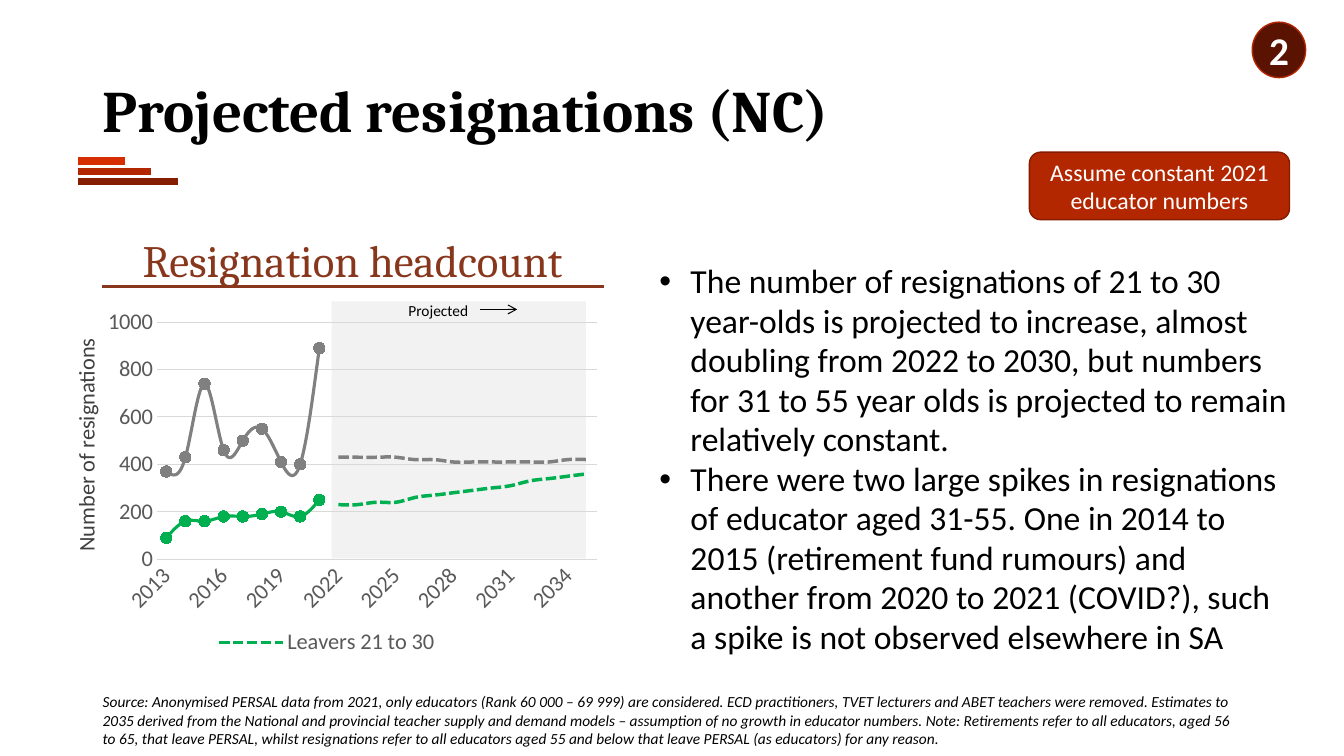
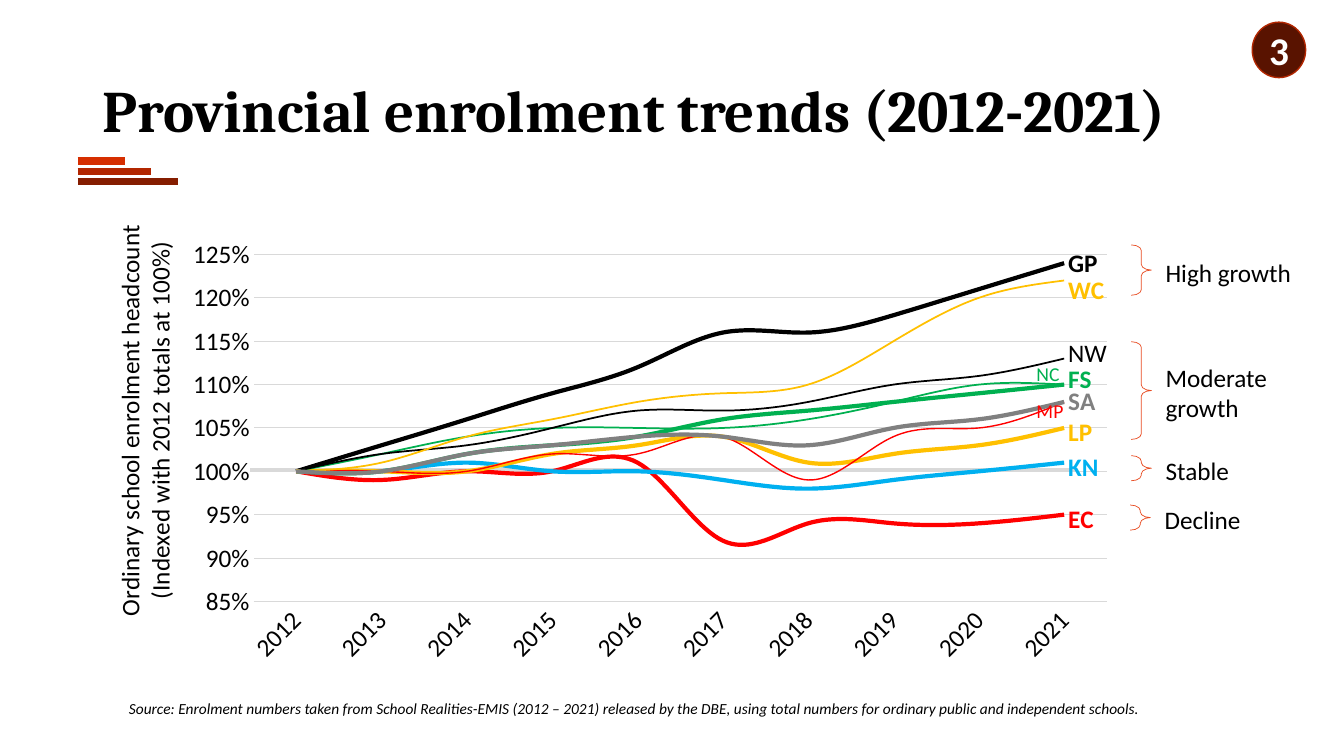
import pptx
import pptx.chart.data
import pptx.dml.color
import pptx.enum.chart
import pptx.enum.dml
import pptx.enum.shapes
import pptx.enum.text
import pptx.oxml
import pptx.oxml.ns
import pptx.util
from lxml import etree

PX = 9144  # EMU per px, 100 px to the inch
COLORS = {
    "black": "000000", "white": "FFFFFF", "ink": "404040", "axis": "595959",
    "grid": "D9D9D9", "shade": "BFBFBF", "grey": "808080", "brown": "88371D",
    "bar_low": "851D00", "bar_mid": "B22600", "bar_top": "D62E00",
    "box_edge": "841C00", "badge": "591300", "brace": "E84C22",
    "green": "00B050", "red": "FF0000", "blue": "00B0F0", "amber": "FFC000",
}
COLORS = {name: pptx.dml.color.RGBColor.from_string(c) for name, c in COLORS.items()}
qn = pptx.oxml.ns.qn
Pt = pptx.util.Pt
PRESET = pptx.enum.shapes.MSO_SHAPE
ALIGN = pptx.enum.text.PP_ALIGN
ANCHOR = pptx.enum.text.MSO_ANCHOR
XL = pptx.enum.chart


def put_text(slide, box, text, size=18, font="Calibri", color="black", bold=False,
             italic=False, align=ALIGN.LEFT, anchor=ANCHOR.MIDDLE, insets=(10, 5, 10, 5),
             spacing=None, bullet=None, rotation=0, preset=None, fill=None, alpha=None,
             edge=None):
    """Add a text box, or a preset shape with text; return it."""
    box = [v * PX for v in box]
    if preset is None:
        shape = slide.shapes.add_textbox(*box)
    else:
        shape = slide.shapes.add_shape(preset, *box)
        shape.shadow.inherit = False
        shape.fill.solid()
        shape.fill.fore_color.rgb = COLORS[fill]
        if alpha:
            tint = shape.fill._xPr.find(".//" + qn("a:srgbClr"))
            etree.SubElement(tint, qn("a:alpha"), val=str(alpha * 1000))
        if edge:
            shape.line.color.rgb = COLORS[edge]
            shape.line.width = Pt(1)
        else:
            shape.line.fill.background()
    shape.rotation = rotation
    frame = shape.text_frame
    frame.word_wrap = True
    frame.vertical_anchor = anchor
    frame.margin_left, frame.margin_top, frame.margin_right, frame.margin_bottom = (
        v * PX for v in insets)
    frame.text = text
    for paragraph in frame.paragraphs:
        paragraph.alignment = align
        if spacing:
            paragraph.line_spacing = spacing
        if bullet:
            props = paragraph._p.get_or_add_pPr()
            props.set("marL", str(31 * PX))
            props.set("indent", str(-31 * PX))
            etree.SubElement(props, qn("a:buFont"), typeface="Arial")
            etree.SubElement(props, qn("a:buChar"), char=bullet)
        for run in paragraph.runs:
            run.font.name, run.font.size = font, Pt(size)
            run.font.bold, run.font.italic = bold, italic
            run.font.color.rgb = COLORS[color]
    return shape


def place(part, after, x, y, w=None, h=None, edge=True, inner=False):
    """Give a chart part a manual layout, following its last child named after."""
    for old in part.findall(qn("c:layout")):
        part.remove(old)
    layout = etree.Element(qn("c:layout"))
    manual = etree.SubElement(layout, qn("c:manualLayout"))
    settings = [("layoutTarget", "inner" if inner else None),
                ("xMode", "edge" if edge else None), ("yMode", "edge" if edge else None),
                ("x", x), ("y", y), ("w", w), ("h", h)]
    for tag, value in settings:
        if value is not None:
            etree.SubElement(manual, qn("c:" + tag), val=str(value))
    if after:
        part.findall(qn(after))[-1].addnext(layout)
    else:
        part.insert(0, layout)


deck = pptx.Presentation()
deck.slide_width, deck.slide_height = 1333 * PX, 750 * PX
resignations = deck.slides.add_slide(deck.slide_layouts[6])
enrolment = deck.slides.add_slide(deck.slide_layouts[6])

# Shading of the projected years, behind the arrow and the chart
put_text(resignations, (329, 299, 252, 255), "Projected", size=11, anchor=ANCHOR.TOP,
         insets=(76, 0, 10, 0), preset=PRESET.RECTANGLE, fill="shade", alpha=20)

# Lines: the bars under each title, heading rule, arrow, 100% baseline
lines = [
    (slide, 77, y, end, y, color, 5.5, False)
    for slide in (resignations, enrolment)
    for y, end, color in ((180, 177, "bar_low"), (170, 150, "bar_mid"), (160, 124, "bar_top"))
] + [
    (resignations, 101, 284, 599, 284, "brown", 2.25, False),
    (resignations, 476, 307, 513, 307, "black", 0.75, True),
    (enrolment, 248, 466, 1068, 466, "grid", 3, False),
]
for slide, x1, y1, x2, y2, color, weight, arrow in lines:
    line = slide.shapes.add_connector(
        pptx.enum.shapes.MSO_CONNECTOR.STRAIGHT, x1 * PX, y1 * PX, x2 * PX, y2 * PX)
    line.line.color.rgb = COLORS[color]
    line.line.width = Pt(weight)
    props = line._element.spPr
    if arrow:
        etree.SubElement(props.find(qn("a:ln")), qn("a:tailEnd"), type="arrow")
    etree.SubElement(props, qn("a:effectLst"))

# Titles and numbered badges
for slide, number, title in (
        (resignations, "2", "Projected resignations (NC)"),
        (enrolment, "3", "Provincial enrolment trends (2012-2021)")):
    put_text(slide, (92, 40, 1150, 145), title, size=42, font="Cambria", bold=True, spacing=0.9)
    put_text(slide, (1242, 22, 53, 55), number, size=28, color="white", bold=True,
             align=ALIGN.CENTER, insets=(0, 0, 0, 0), preset=PRESET.OVAL,
             fill="badge", edge="bar_mid")

# Resignations: text
put_text(resignations, (101, 229, 498, 57), "Resignation headcount", size=32,
         font="Cambria", color="brown", align=ALIGN.CENTER)
put_text(resignations, (1021, 151, 258, 67), "Assume constant 2021 educator numbers",
         size=17, color="white", align=ALIGN.CENTER, preset=PRESET.ROUNDED_RECTANGLE,
         fill="bar_mid", edge="box_edge")
put_text(resignations, (644, 255, 645, 409),
         "The number of resignations of 21 to 30 year-olds is projected to increase, almost "
         "doubling from 2022 to 2030, but numbers for 31 to 55 year olds is projected to "
         "remain relatively constant.\n"
         "There were two large spikes in resignations of educator aged 31-55. One in 2014 to "
         "2015 (retirement fund rumours) and another from 2020 to 2021 (COVID?), such a spike "
         "is not observed elsewhere in SA",
         size=24, anchor=ANCHOR.TOP, spacing=0.98, bullet="•")
put_text(resignations, (-70, 424, 310, 35), "Number of resignations", size=16,
         color="ink", align=ALIGN.CENTER, rotation=270)
put_text(resignations, (92, 682, 1150, 57),
         "Source: Anonymised PERSAL data from 2021, only educators (Rank 60 000 – 69 999) are "
         "considered. ECD practitioners, TVET lecturers and ABET teachers were removed. "
         "Estimates to 2035 derived from the National and provincial teacher supply and demand "
         "models – assumption of no growth in educator numbers. Note: Retirements refer to all "
         "educators, aged 56 to 65, that leave PERSAL, whilst resignations refer to all "
         "educators aged 55 and below that leave PERSAL (as educators) for any reason.",
         size=11, italic=True, anchor=ANCHOR.TOP)

# Enrolment: growth groups and source
for label, x, middle, height in (("High growth", 1122, 268, 50), ("Moderate growth", 1122, 387, 97),
                                 ("Stable", 1122, 464, 25), ("Decline", 1121, 513, 25)):
    brace = enrolment.shapes.add_shape(PRESET.RIGHT_BRACE, x * PX, (middle - height // 2) * PX,
                                       20 * PX, height * PX)
    brace.shadow.inherit = False
    brace.fill.background()
    brace.line.color.rgb = COLORS["brace"]
    brace.line.width = Pt(0.5)
    brace.adjustments[0] = 0.28
    put_text(enrolment, (x + 25, middle - 35, 148, 75), label, insets=(9, 5, 0, 5))
put_text(enrolment, (118, 682, 1101, 42),
         "Source: Enrolment numbers taken from School Realities-EMIS (2012 – 2021) released by "
         "the DBE, using total numbers for ordinary public and independent schools.",
         size=11, italic=True)

# Chart data: name, colour, line width, values
past, future = [None] * 9, [None] * 14
leavers = [
    ("Leavers 21 to 30", "green", 2.5, past + [230, 230, 240, 240, 260, 270, 280, 290, 300,
                                               310, 330, 340, 350, 360]),
    ("Leavers aged 31 to 55", "grey", 2.5, past + [430, 430, 430, 430, 420, 420, 410, 410, 410,
                                                   410, 410, 410, 420, 420]),
    ("Series 3", "green", 2.25, [90, 160, 160, 180, 180, 190, 200, 180, 250] + future),
    ("Series 4", "grey", 2.25, [370, 430, 740, 460, 500, 550, 410, 400, 890] + future),
]
provinces = [
    ("EC", "red", 3, [1, 0.99, 1, 1, 1.01, 0.92, 0.94, 0.94, 0.94, 0.95]),
    ("FS", "green", 3, [1, 1, 1.02, 1.03, 1.04, 1.06, 1.07, 1.08, 1.09, 1.1]),
    ("GP", "black", 3, [1, 1.03, 1.06, 1.09, 1.12, 1.16, 1.16, 1.18, 1.21, 1.24]),
    ("KN", "blue", 3, [1, 1, 1.01, 1, 1, 0.99, 0.98, 0.99, 1, 1.01]),
    ("LP", "amber", 3, [1, 1, 1, 1.02, 1.03, 1.04, 1.01, 1.02, 1.03, 1.05]),
    ("MP", "red", 1, [1, 1, 1, 1.02, 1.02, 1.04, 0.99, 1.04, 1.05, 1.08]),
    ("NC", "green", 1.25, [1, 1.02, 1.04, 1.05, 1.05, 1.05, 1.06, 1.08, 1.1, 1.1]),
    ("NW", "black", 1.25, [1, 1.02, 1.03, 1.05, 1.07, 1.07, 1.08, 1.1, 1.11, 1.13]),
    ("WC", "amber", 1.25, [1, 1.01, 1.04, 1.06, 1.08, 1.09, 1.1, 1.15, 1.2, 1.22]),
    ("SA", "grey", 3, [1, 1, 1.02, 1.03, 1.04, 1.04, 1.03, 1.05, 1.06, 1.08]),
]

# Both charts: slide, box, first year, series, text, scale, plot layout
charts = []
for slide, box, start, rows, size, color, low, high, step, form, plot_box in (
        (resignations, (85, 299, 514, 366), 2013, leavers, 16, "axis", 0, 1000, 200, "0",
         (0.137, 0.056, 0.849, 0.643)),
        (enrolment, (67, 185, 1054, 504), 2012, provinces, 18, "black", 0.85, 1.25, 0.05, "0%",
         (0.175, 0.134, 0.803, 0.683))):
    data = pptx.chart.data.CategoryChartData()
    data.categories = [str(start + i) for i in range(len(rows[0][3]))]
    for name, _, _, values in rows:
        data.add_series(name, values)
    chart = slide.shapes.add_chart(XL.XL_CHART_TYPE.LINE, *(v * PX for v in box), data).chart
    charts.append(chart)
    chart.has_title = chart.has_legend = False
    chart.font.name, chart.font.size = "Calibri", Pt(size)
    chart.font.color.rgb = COLORS[color]
    chart.plots[0].vary_by_categories = False
    for series, (_, hue, weight, _) in zip(chart.plots[0].series, rows):
        series.smooth = True
        series.format.line.color.rgb = COLORS[hue]
        series.format.line.width = Pt(weight)

    years, scale = chart.category_axis, chart.value_axis
    for axis in (years, scale):
        axis.major_tick_mark = axis.minor_tick_mark = XL.XL_TICK_MARK.NONE
        axis.tick_labels.font.size = Pt(size)
        axis.tick_labels.font.color.rgb = COLORS[color]
    years._element.find(qn("c:txPr")).find(qn("a:bodyPr")).set("rot", "-2700000")
    scale.minimum_scale, scale.maximum_scale, scale.major_unit = low, high, step
    scale.tick_labels.number_format = form
    scale.tick_labels.number_format_is_linked = False
    scale.format.line.fill.background()
    for rule in (years.format.line, scale.major_gridlines.format.line):
        rule.color.rgb = COLORS["grid"]
        rule.width = Pt(0.75)

    # See-through background, so that what lies behind shows
    area = chart._chartSpace.chart.plotArea
    place(area, None, *plot_box, inner=True)
    for position in (area[-1], chart._chartSpace.chart):
        clear = etree.Element(qn("c:spPr"))
        etree.SubElement(clear, qn("a:noFill"))
        etree.SubElement(etree.SubElement(clear, qn("a:ln")), qn("a:noFill"))
        position.addnext(clear)

# Resignations chart: dashed projections, marked history, legend, every third year
leaver_chart, province_chart = charts
for i, series in enumerate(leaver_chart.plots[0].series):
    if i < 2:
        series.format.line.dash_style = pptx.enum.dml.MSO_LINE.SQUARE_DOT
    else:
        series.marker.style, series.marker.size = XL.XL_MARKER_STYLE.CIRCLE, 8
        for paint in (series.marker.format.fill, series.marker.format.line.fill):
            paint.solid()
            paint.fore_color.rgb = COLORS[leavers[i][1]]
leaver_chart.has_legend = True
legend = leaver_chart.legend
legend.position = XL.XL_LEGEND_POSITION.BOTTOM
legend.include_in_layout = False
legend.font.size = Pt(16)
legend.font.color.rgb = COLORS["axis"]
for place_in_list, hidden in enumerate((1, 2, 3), 1):
    entry = etree.Element(qn("c:legendEntry"))
    etree.SubElement(entry, qn("c:idx"), val=str(hidden))
    etree.SubElement(entry, qn("c:delete"), val="1")
    legend._element.insert(place_in_list, entry)
place(legend._element, "c:legendEntry", 0.24, 0.88, 0.45, 0.09)
skip = etree.Element(qn("c:tickLblSkip"), val="3")
leaver_chart.category_axis._element.find(qn("c:noMultiLvlLbl")).addprevious(skip)

# Enrolment chart: axis title, and a name at the end of each line
axis_title = province_chart.value_axis.axis_title
axis_title.text_frame.text = ("Ordinary school enrolment headcount\n"
                              "(Indexed with 2012 totals at 100%)")
for paragraph in axis_title.text_frame.paragraphs:
    for run in paragraph.runs:
        run.font.size, run.font.bold, run.font.name = Pt(18), False, "Calibri"
        run.font.color.rgb = COLORS["black"]
axis_title._element.find(".//" + qn("a:bodyPr")).set("rot", "-5400000")
place(axis_title._element, "c:tx", 0.04, 0.07)

label_shift = {"EC": (0, 0.01), "FS": (0, -0.01), "KN": (0, 0.01), "LP": (0, 0.01),
               "MP": (-0.03, 0.02), "NC": (-0.03, -0.02), "NW": (0, -0.01), "WC": (0, 0.02)}
for series, (name, hue, _, _) in zip(province_chart.plots[0].series, provinces):
    series.data_labels.show_value = False
    label = series.points[9].data_label
    label.position = XL.XL_LABEL_POSITION.RIGHT
    label.font.size = Pt(14 if name in ("MP", "NC") else 18)
    label.font.bold = name not in ("MP", "NC", "NW")
    label.font.color.rgb = COLORS[hue]
    mark = label._get_or_add_dLbl()
    mark.find(qn("c:showVal")).set("val", "0")
    mark.find(qn("c:showSerName")).set("val", "1")
    if name in label_shift:
        place(mark, "c:idx", *label_shift[name], edge=False)

deck.save("out.pptx")
